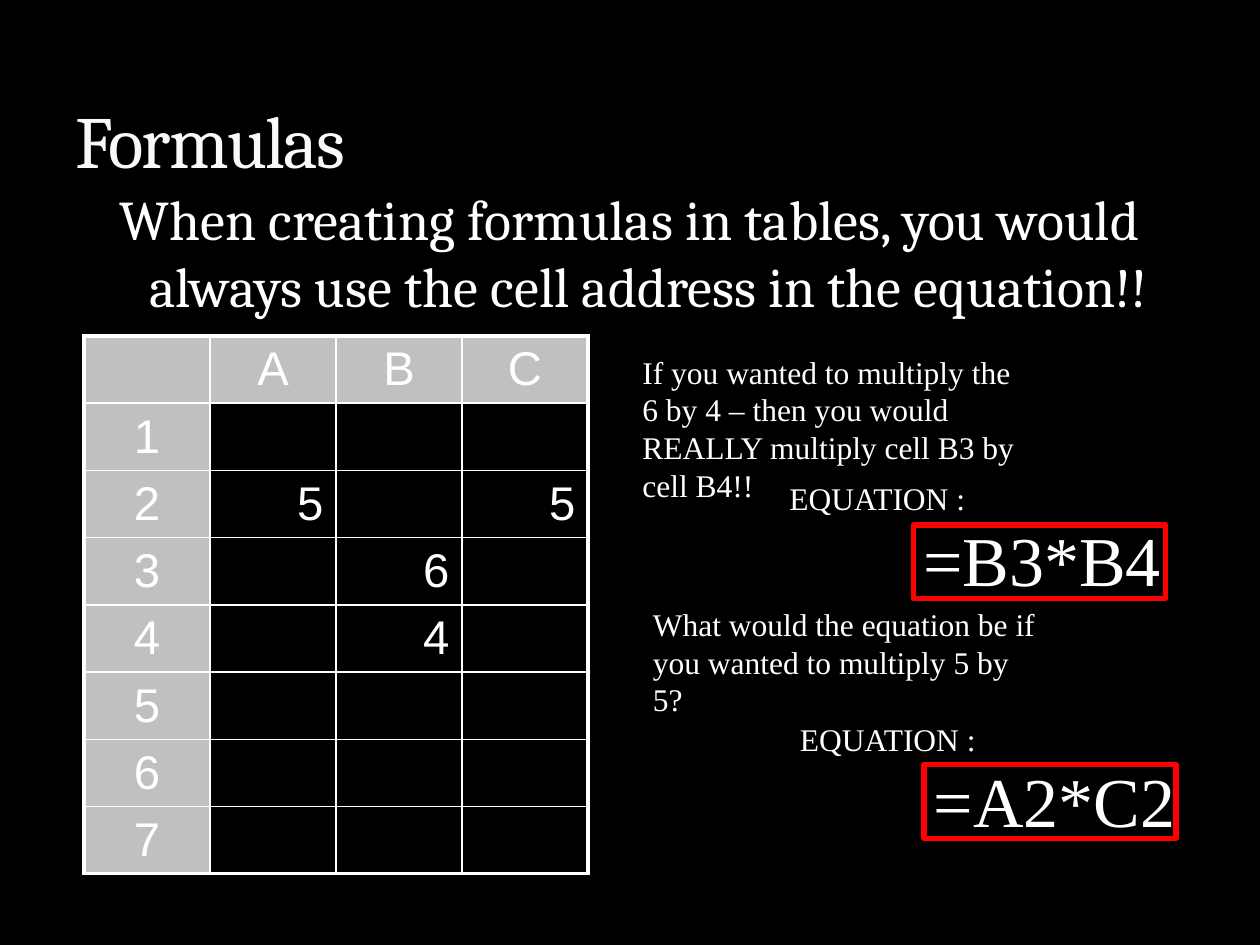
from dataclasses import dataclass

from lxml import etree
from pptx import Presentation
from pptx.dml.color import RGBColor
from pptx.enum.shapes import MSO_SHAPE
from pptx.enum.text import MSO_ANCHOR, PP_ALIGN
from pptx.oxml.ns import qn
from pptx.util import Pt

RECT = MSO_SHAPE.RECTANGLE
TOP, MIDDLE, BOTTOM = MSO_ANCHOR.TOP, MSO_ANCHOR.MIDDLE, MSO_ANCHOR.BOTTOM
LEFT, CENTER, RIGHT = PP_ALIGN.LEFT, PP_ALIGN.CENTER, PP_ALIGN.RIGHT


@dataclass(frozen=True)
class Theme:
    background: str = "000000"
    text: str = "FFFFFF"
    title: str = "F9F9F9"
    header: str = "C0C0C0"
    highlight: str = "FF0000"
    heading_font: str = "Cambria"
    table_font: str = "Arial"
    note_font: str = "Times New Roman"
    title_size: float = 42
    body_size: float = 32
    table_size: float = 27
    note_size: float = 18
    equation_size: float = 40
    outer_border: float = 2.25
    inner_border: float = 1


@dataclass(frozen=True)
class Box:
    left: float
    top: float
    width: float
    height: float

    def emu(self) -> tuple:
        return Pt(self.left), Pt(self.top), Pt(self.width), Pt(self.height)


@dataclass(frozen=True)
class Example:
    question: str
    equation: str
    question_box: Box
    equation_box: Box
    frame: Box


THEME = Theme()

# Spreadsheet grid
GRID = Box(48, 192, 288, 300)
COLUMNS = ["", "A", "B", "C"]
ROW_COUNT = 8
VALUES = {(2, 1): "5", (2, 3): "5", (3, 2): "6", (4, 2): "4"}

EQUATION_INDENT = 76.5
EXAMPLES = [
    Example("If you wanted to multiply the 6 by 4 – then you would "
            "REALLY multiply cell B3 by cell B4!!", "=B3*B4",
            Box(360, 198, 234, 94), Box(444, 270, 234, 78),
            Box(522, 300, 144, 42)),
    Example("What would the equation be if you wanted to multiply 5 by 5?",
            "=A2*C2",
            Box(366, 342, 234, 51), Box(450, 408, 234, 78),
            Box(528, 437, 144, 42)),
]


def style(p, font: str, size: float, color: str = THEME.text, align=LEFT) -> None:
    p.alignment = align
    for r in p.runs:
        r.font.name = font
        r.font.size = Pt(size)
        r.font.color.rgb = RGBColor.from_string(color)


def add_text(s, box: Box, text: str, anchor=TOP):
    tf = s.shapes.add_textbox(*box.emu()).text_frame
    tf.word_wrap = True
    tf.vertical_anchor = anchor
    tf.text = text
    return tf


def set_indent(p, margin: float, first: float = 0) -> None:
    pPr = p._p.get_or_add_pPr()
    pPr.set("marL", str(Pt(margin)))
    pPr.set("indent", str(Pt(first)))


def set_borders(cell, widths: dict) -> None:
    tcPr = cell._tc.get_or_add_tcPr()
    for i, (side, width) in enumerate(widths.items()):
        ln = etree.Element(qn(f"a:ln{side}"), w=str(Pt(width)))
        fill = etree.SubElement(ln, qn("a:solidFill"))
        etree.SubElement(fill, qn("a:srgbClr"), val=THEME.text)
        tcPr.insert(i, ln)


def add_grid(s) -> None:
    last_row, last_col = ROW_COUNT - 1, len(COLUMNS) - 1
    frame = s.shapes.add_table(ROW_COUNT, len(COLUMNS), *GRID.emu())
    table = frame.table
    table.first_row = table.horz_banding = False
    for row in table.rows:
        row.height = Pt(GRID.height / ROW_COUNT)

    def border(is_outer: bool) -> float:
        return THEME.outer_border if is_outer else THEME.inner_border

    for i in range(ROW_COUNT):
        for j, letter in enumerate(COLUMNS):
            cell = table.cell(i, j)
            is_header = i == 0 or j == 0
            if i == 0:
                text = letter
            else:
                text = str(i) if j == 0 else VALUES.get((i, j), "")
            cell.text = text
            cell.margin_top = cell.margin_bottom = Pt(3)
            cell.vertical_anchor = MIDDLE
            style(cell.text_frame.paragraphs[0], THEME.table_font,
                  THEME.table_size, align=CENTER if is_header else RIGHT)
            cell.fill.solid()
            cell.fill.fore_color.rgb = RGBColor.from_string(
                THEME.header if is_header else THEME.background)
            set_borders(cell, {"L": border(j == 0), "R": border(j == last_col),
                               "T": border(i == 0), "B": border(i == last_row)})


def add_example(s, example: Example) -> None:
    tf = add_text(s, example.question_box, example.question)
    style(tf.paragraphs[0], THEME.note_font, THEME.note_size)

    tf = add_text(s, example.equation_box, "EQUATION :")
    style(tf.paragraphs[0], THEME.note_font, THEME.note_size)
    p = tf.add_paragraph()
    p.text = example.equation
    set_indent(p, EQUATION_INDENT)
    style(p, THEME.note_font, THEME.equation_size)


def add_frame(s, box: Box) -> None:
    sp = s.shapes.add_shape(RECT, *box.emu())
    sp.shadow.inherit = False
    sp.fill.background()
    sp.line.color.rgb = RGBColor.from_string(THEME.highlight)
    sp.line.width = Pt(3)


def main() -> None:
    prs = Presentation()
    prs.slide_width, prs.slide_height = Pt(720), Pt(540)
    s = prs.slides.add_slide(prs.slide_layouts[6])
    s.background.fill.solid()
    s.background.fill.fore_color.rgb = RGBColor.from_string(THEME.background)

    # Introduction
    tf = add_text(s, Box(36, 102, 648, 378),
                  "When creating formulas in tables, you would always use "
                  "the cell address in the equation!!")
    p = tf.paragraphs[0]
    p.space_before = Pt(6)
    set_indent(p, 21.6, -21.6)
    style(p, THEME.heading_font, THEME.body_size, align=CENTER)

    # Title
    tf = add_text(s, Box(36, 12, 648, 96), "Formulas", BOTTOM)
    p = tf.paragraphs[0]
    style(p, THEME.heading_font, THEME.title_size, THEME.title)
    p.runs[0]._r.get_or_add_rPr().set("spc", "-100")

    # Grid, worked examples and their frames
    add_grid(s)
    for example in EXAMPLES:
        add_example(s, example)
    for example in EXAMPLES:
        add_frame(s, example.frame)

    prs.save("out.pptx")


if __name__ == "__main__":
    main()
